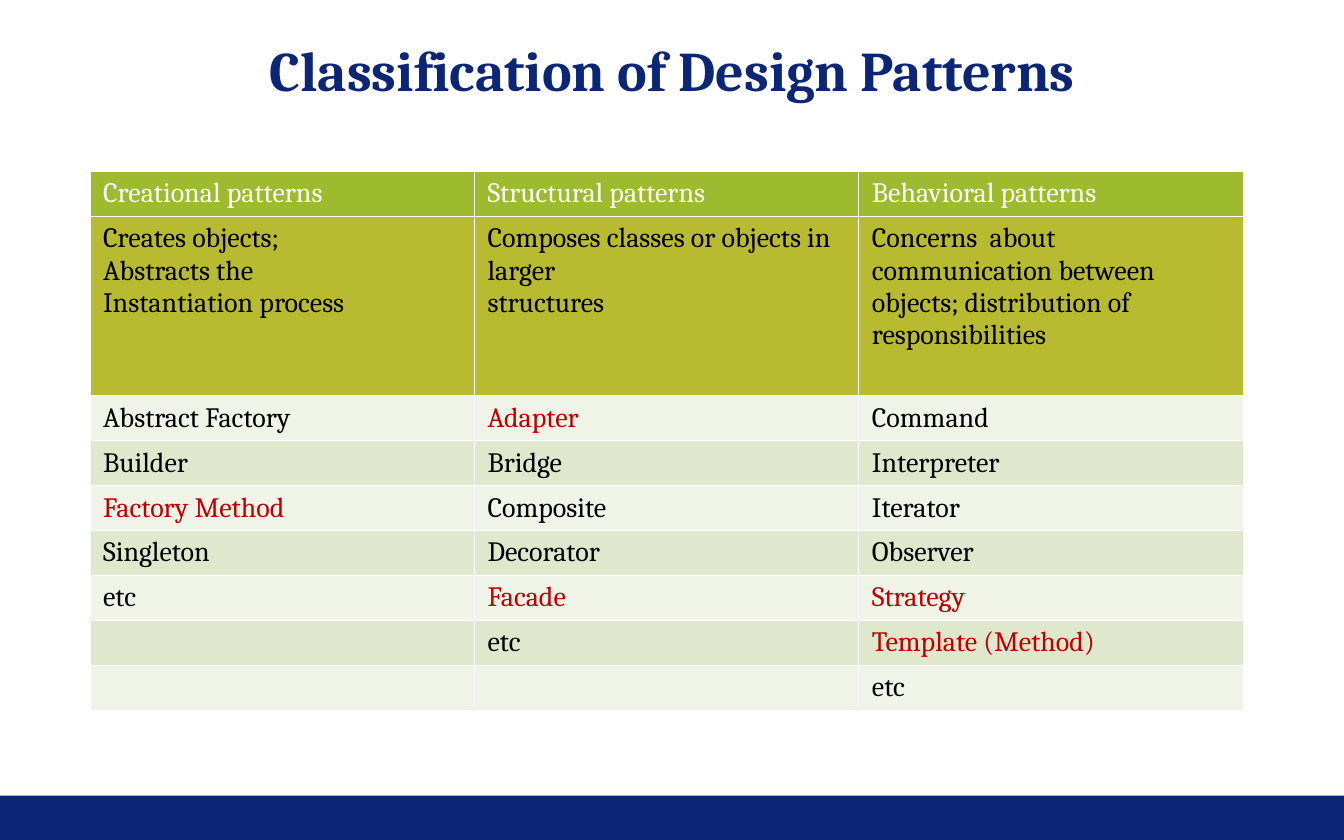
from dataclasses import dataclass

from lxml import etree
from pptx import Presentation
from pptx.dml.color import RGBColor
from pptx.enum.shapes import MSO_SHAPE
from pptx.enum.text import MSO_ANCHOR, MSO_AUTO_SIZE, PP_ALIGN
from pptx.oxml.ns import qn
from pptx.util import Cm, Pt


@dataclass(frozen=True)
class Theme:
    font: str = "Cambria"
    title_size: int = 40
    table_size: int = 20
    navy: str = "0C2577"
    white: str = "FFFFFF"
    black: str = "000000"
    red: str = "C00000"
    header: str = "9EBA2E"
    summary: str = "B8BA30"
    bands: tuple = ("F0F3E8", "DFE7CD")


theme = Theme()


def format_text(text_frame, size, color, bold=False):
    for paragraph in text_frame.paragraphs:
        for run in paragraph.runs:
            run.font.name = theme.font
            run.font.size = Pt(size)
            run.font.bold = bold
            run.font.color.rgb = RGBColor.from_string(color)


def add_borders(cell, color):
    """Draw 1 pt lines on all sides; call before filling the cell."""
    properties = cell._tc.get_or_add_tcPr()
    for side in ("a:lnL", "a:lnR", "a:lnT", "a:lnB"):
        line = etree.SubElement(properties, qn(side), w=str(Pt(1)))
        fill = etree.SubElement(line, qn("a:solidFill"))
        etree.SubElement(fill, qn("a:srgbClr"), val=color)


presentation = Presentation()
presentation.slide_width = Cm(33.88)
presentation.slide_height = Cm(21.18)
slide = presentation.slides.add_slide(presentation.slide_layouts[5])

# Footer band
band_height = Cm(1.12)
footer = slide.shapes.add_shape(
    MSO_SHAPE.RECTANGLE, 0, presentation.slide_height - band_height,
    presentation.slide_width, band_height)
footer.shadow.inherit = False
footer.fill.solid()
footer.fill.fore_color.rgb = RGBColor.from_string(theme.navy)
footer.line.fill.background()

# Title
title = slide.shapes.title
title.left, title.top, title.width, title.height = Cm(1.12), Cm(1.12), Cm(31.65), Cm(1.24)
frame = title.text_frame
frame.text = "Classification of Design Patterns"
frame.auto_size = MSO_AUTO_SIZE.NONE
frame.vertical_anchor = MSO_ANCHOR.MIDDLE
frame.margin_left = frame.margin_right = frame.margin_top = frame.margin_bottom = 0
frame.paragraphs[0].alignment = PP_ALIGN.CENTER
format_text(frame, theme.title_size, theme.navy, bold=True)

# Pattern table
rows = [
    ("Creational patterns", "Structural patterns", "Behavioral patterns"),
    ("Creates objects;\nAbstracts the\nInstantiation process",
     "Composes classes or objects in larger\nstructures",
     "Concerns  about communication between objects; distribution of responsibilities"),
    ("Abstract Factory", "Adapter", "Command"),
    ("Builder", "Bridge", "Interpreter"),
    ("Factory Method", "Composite", "Iterator"),
    ("Singleton", "Decorator", "Observer"),
    ("etc", "Facade", "Strategy"),
    ("", "etc", "Template (Method)"),
    ("", "", "etc"),
]
highlighted = {"Adapter", "Factory Method", "Facade", "Strategy", "Template (Method)"}
row_height, summary_height, column_width = Cm(1.13), Cm(4.52), Cm(9.69)

table = slide.shapes.add_table(
    len(rows), 3, Cm(2.27), Cm(4.32),
    3 * column_width, (len(rows) - 1) * row_height + summary_height).table
for column in table.columns:
    column.width = column_width

for row_index, texts in enumerate(rows):
    table.rows[row_index].height = summary_height if row_index == 1 else row_height
    if row_index == 0:
        fill_color = theme.header
    elif row_index == 1:
        fill_color = theme.summary
    else:
        fill_color = theme.bands[row_index % 2]

    for column_index, text in enumerate(texts):
        cell = table.cell(row_index, column_index)
        cell.margin_left = cell.margin_right = Cm(0.33)
        cell.margin_top = cell.margin_bottom = Cm(0.16)
        add_borders(cell, theme.white)
        cell.fill.solid()
        cell.fill.fore_color.rgb = RGBColor.from_string(fill_color)
        cell.text_frame.text = text
        if row_index == 0:
            text_color = theme.white
        else:
            text_color = theme.red if text in highlighted else theme.black
        format_text(cell.text_frame, theme.table_size, text_color)

presentation.save("out.pptx")
